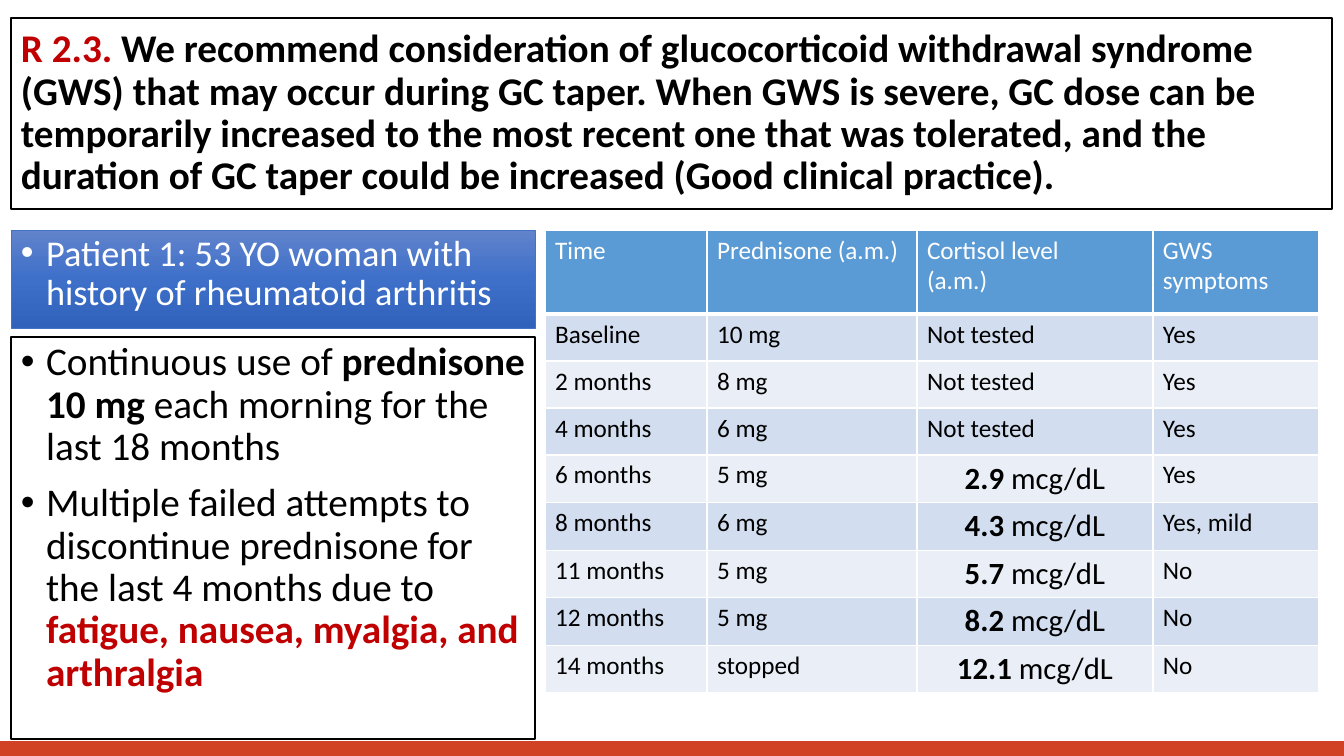
import copy
import pptx
import pptx.util
import pptx.dml.color
import pptx.enum.shapes
import pptx.enum.text
import pptx.oxml.ns
from lxml import etree

BLACK, WHITE, RED = "000000", "FFFFFF", "C00000"
qn = pptx.oxml.ns.qn

SCHEDULE = [
    ("Baseline", "10 mg", "Not tested", "Yes"),
    ("2 months", "8 mg", "Not tested", "Yes"),
    ("4 months", "6 mg", "Not tested", "Yes"),
    ("6 months", "5 mg", "2.9 mcg/dL", "Yes"),
    ("8 months", "6 mg", "4.3 mcg/dL", "Yes, mild"),
    ("11 months", "5 mg", "5.7 mcg/dL", "No"),
    ("12 months", "5 mg", "8.2 mcg/dL", "No"),
    ("14 months", "stopped", "12.1 mcg/dL", "No"),
]
HEADINGS = ("Time", "Prednisone (a.m.)", "Cortisol level\v(a.m.)", "GWS symptoms")
COLUMN_WIDTHS = (162, 210, 236, 166)
HEADING_HEIGHT, ROW_HEIGHT = 84, 47


def px(length):
    return pptx.util.Emu(round(length * 914400 / 100.8))


def rgb(color):
    return pptx.dml.color.RGBColor.from_string(color)


def add_box(slide, left, top, width, height, fill, line, line_width=1):
    box = slide.shapes.add_shape(
        pptx.enum.shapes.MSO_SHAPE.RECTANGLE, px(left), px(top), px(width), px(height))
    box.shadow.inherit = False
    box.fill.solid()
    box.fill.fore_color.rgb = rgb(fill)
    box.line.color.rgb = rgb(line)
    box.line.width = pptx.util.Pt(line_width)
    return box


def set_gradient(box, first, middle, last):
    box.fill.gradient()
    box.fill.gradient_angle = 270
    stops = box._element.spPr.find(qn("a:gradFill")).find(qn("a:gsLst"))
    stops.insert(1, copy.deepcopy(stops[0]))
    for stop, color, position in zip(box.fill.gradient_stops, (first, middle, last), (0, 0.5, 1)):
        stop.color.rgb = rgb(color)
        stop.position = position


def add_bullet(paragraph):
    properties = paragraph._p.get_or_add_pPr()
    properties.set("marL", "228600")
    properties.set("indent", "-228600")
    font = etree.SubElement(properties, qn("a:buFont"))
    font.set("typeface", "Arial")
    etree.SubElement(properties, qn("a:buChar")).set("char", "•")


def write_text(box, paragraphs, size, color, bulleted, anchor):
    frame = box.text_frame
    frame.word_wrap = True
    frame.vertical_anchor = anchor
    for number, runs in enumerate(paragraphs):
        paragraph = frame.add_paragraph() if number else frame.paragraphs[0]
        if bulleted:
            add_bullet(paragraph)
        paragraph.alignment = pptx.enum.text.PP_ALIGN.LEFT
        paragraph.line_spacing = 0.9
        if number:
            paragraph.space_before = pptx.util.Pt(10)
        paragraph.font.name = "Calibri"
        paragraph.font.size = pptx.util.Pt(size)
        paragraph.font.color.rgb = rgb(color)
        for text, bold, run_color in runs:
            run = paragraph.add_run()
            run.text = text
            run.font.bold = bold
            run.font.color.rgb = rgb(run_color)


def set_borders(cell, top, bottom):
    properties = cell._tc.get_or_add_tcPr()
    for side, width in (("L", 1), ("R", 1), ("T", top), ("B", bottom)):
        border = etree.SubElement(properties, qn(f"a:ln{side}"), w=str(pptx.util.Pt(width)))
        fill = etree.SubElement(border, qn("a:solidFill"))
        etree.SubElement(fill, qn("a:srgbClr"), val=WHITE)


def fill_cell(cell, text, row):
    set_borders(cell, 3 if row == 1 else 1, 3 if row == 0 else 1)
    cell.fill.solid()
    cell.fill.fore_color.rgb = rgb("5B9BD5" if row == 0 else "D2DEEF" if row % 2 else "EAEFF7")
    paragraph = cell.text_frame.paragraphs[0]
    paragraph.alignment = pptx.enum.text.PP_ALIGN.CENTER
    level, unit, _ = text.partition(" mcg/dL")
    if unit:
        for part, bold in ((level, True), (unit, False)):
            run = paragraph.add_run()
            run.text = part
            run.font.bold = bold
    else:
        cell.text_frame.text = text
        paragraph.font.bold = row == 0
    paragraph.font.name = "Calibri"
    paragraph.font.size = pptx.util.Pt(22)
    paragraph.font.color.rgb = rgb(BLACK)


def add_schedule(slide, left, top):
    rows = [HEADINGS] + SCHEDULE
    height = HEADING_HEIGHT + ROW_HEIGHT * len(SCHEDULE)
    schedule = slide.shapes.add_table(
        len(rows), len(HEADINGS), px(left), px(top), px(sum(COLUMN_WIDTHS)), px(height)).table
    for column, width in zip(schedule.columns, COLUMN_WIDTHS):
        column.width = px(width)
    for row, texts in enumerate(rows):
        schedule.rows[row].height = px(ROW_HEIGHT if row else HEADING_HEIGHT)
        for column, text in enumerate(texts):
            fill_cell(schedule.cell(row, column), text, row)


def main():
    deck = pptx.Presentation()
    deck.slide_width, deck.slide_height = px(1344), px(756)
    slide = deck.slides.add_slide(deck.slide_layouts[6])
    top_anchor = pptx.enum.text.MSO_ANCHOR.TOP

    add_box(slide, 0, 742, 1344, 14, "D14224", "D14224")

    recommendation = add_box(slide, 11, 18, 1321, 191, WHITE, BLACK)
    write_text(recommendation, [[
        ("R 2.3. ", True, RED),
        ("We recommend consideration of glucocorticoid withdrawal syndrome (GWS) that may occur "
         "during GC taper. When GWS is severe, GC dose can be temporarily increased to the most "
         "recent one that was tolerated, and the duration of GC taper could be increased "
         "(Good clinical practice).", True, BLACK),
    ]], 28, BLACK, False, pptx.enum.text.MSO_ANCHOR.MIDDLE)

    patient = add_box(slide, 11, 230, 524, 98, "3E70CA", "4472C4", 0.5)
    set_gradient(patient, "6183CB", "3E70CA", "3062BB")
    write_text(patient, [[
        ("Patient 1: 53 YO woman with history of rheumatoid arthritis", False, WHITE),
    ]], 25.9, WHITE, True, top_anchor)

    history = add_box(slide, 11, 337, 524, 402, WHITE, BLACK)
    write_text(history, [
        [("Continuous use of ", False, BLACK),
         ("prednisone 10 mg ", True, BLACK),
         ("each morning for the last 18 months", False, BLACK)],
        [("Multiple failed attempts to discontinue prednisone for the last 4 months due to ",
          False, BLACK),
         ("fatigue, nausea, myalgia, and arthralgia", True, RED)],
    ], 28, BLACK, True, top_anchor)

    add_schedule(slide, 545, 230)
    deck.save("out.pptx")


if __name__ == "__main__":
    main()
